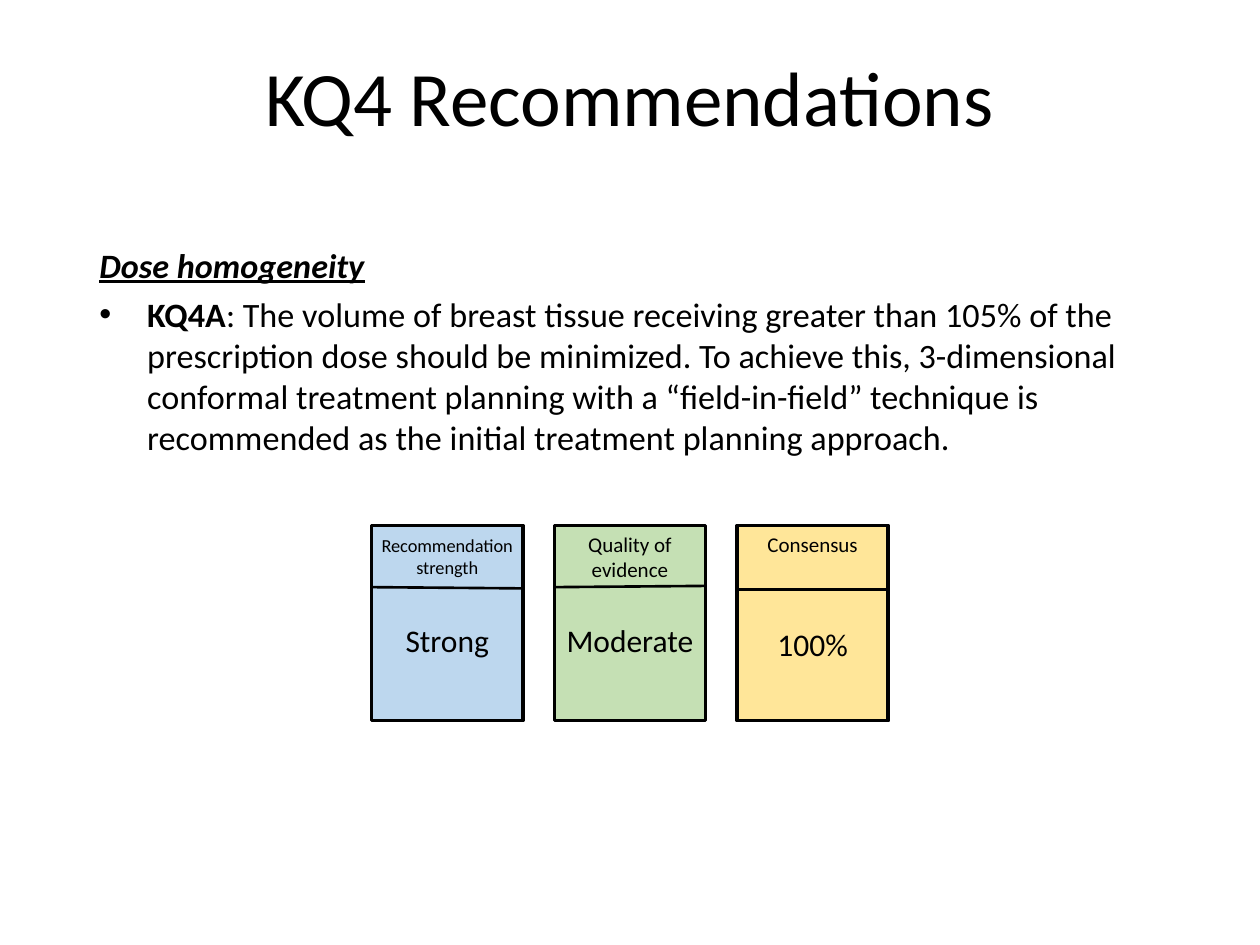
from lxml.etree import SubElement
from pptx import Presentation
from pptx.dml.color import RGBColor
from pptx.enum.shapes import MSO_CONNECTOR, MSO_SHAPE
from pptx.enum.text import MSO_ANCHOR, PP_ALIGN
from pptx.oxml.ns import qn
from pptx.util import Inches, Pt

BLACK = RGBColor(0x00, 0x00, 0x00)
BLUE = RGBColor(0xBD, 0xD7, 0xEE)
GREEN = RGBColor(0xC5, 0xE0, 0xB4)
YELLOW = RGBColor(0xFF, 0xE6, 0x99)
FONT = "Calibri"

TITLE = "KQ4 Recommendations"
HEADING = "Dose homogeneity"
CODE = "KQ4A"
RECOMMENDATION = (
    ": The volume of breast tissue receiving greater than 105% of the "
    "prescription dose should be minimized. To achieve this, 3-dimensional "
    "conformal treatment planning with a “field-in-field” technique is "
    "recommended as the initial treatment planning approach."
)
# label, label size, label insets (x, y), label height, value, fill, divider y (left, right)
CARDS = [
    ("Recommendation strength", 10.5, (0.04, 0.07), 0.5, "Strong", BLUE, (4.66, 4.67)),
    ("Quality of evidence", 12, (0.1, 0.05), 0.5, "Moderate", GREEN, (4.66, 4.65)),
    ("Consensus", 12, (0.1, 0.05), 0.3, "100%", YELLOW, (4.68, 4.68)),
]
CARD_LEFT, CARD_TOP, CARD_W, CARD_H, CARD_GAP = 2.95, 4.17, 1.2, 1.55, 0.25


def add_run(p, text, size, bold=False, italic=False, underline=False):
    r = p.add_run()
    r.text = text
    f = r.font
    f.name, f.size, f.color.rgb = FONT, Pt(size), BLACK
    f.bold, f.italic, f.underline = bold, italic, underline


def add_text(s, text, box, size, align=PP_ALIGN.CENTER, inset=(0.1, 0.05), top=None, **style):
    """Add a wrapped text box; inset is (x, y), and top overrides the upper inset."""
    tf = s.shapes.add_textbox(*map(Inches, box)).text_frame
    tf.word_wrap = True
    tf.vertical_anchor = MSO_ANCHOR.TOP
    tf.margin_left = tf.margin_right = Inches(inset[0])
    tf.margin_top = Inches(inset[1] if top is None else top)
    tf.margin_bottom = Inches(inset[1])
    p = tf.paragraphs[0]
    p.alignment = align
    add_run(p, text, size, **style)
    return tf


def add_bullet(p, indent):
    pPr = p._p.get_or_add_pPr()
    pPr.set("marL", str(Inches(indent)))
    pPr.set("indent", str(-Inches(indent)))
    SubElement(pPr, qn("a:buFont"), typeface="Arial")
    SubElement(pPr, qn("a:buChar"), char="•")


def add_card(s, left, label, label_size, label_inset, label_h, value, fill, divider):
    card = s.shapes.add_shape(
        MSO_SHAPE.RECTANGLE, *map(Inches, (left, CARD_TOP, CARD_W, CARD_H)))
    card.shadow.inherit = False
    card.fill.solid()
    card.fill.fore_color.rgb = fill
    card.line.color.rgb = BLACK
    card.line.width = Pt(2)

    y1, y2 = divider
    line = s.shapes.add_connector(
        MSO_CONNECTOR.STRAIGHT, *map(Inches, (left, y1, left + CARD_W, y2)))
    line.line.color.rgb = BLACK
    line.line.width = Pt(1.5)
    SubElement(line._element.spPr, qn("a:effectLst"))

    add_text(s, label, (left, CARD_TOP, CARD_W, label_h), label_size, inset=label_inset)
    add_text(s, value, (left, min(y2, 4.68) if y1 == y2 else 4.65, CARD_W, 0.63), 18,
             inset=(0.04, 0.05), top=0.28)


def main():
    prs = Presentation()
    prs.slide_width, prs.slide_height = Inches(10), Inches(7.5)
    s = prs.slides.add_slide(prs.slide_layouts[6])

    add_text(s, TITLE, (0.5, 0.3, 9, 1.25), 44, top=0.09)

    tf = add_text(s, HEADING, (0.69, 1.89, 8.62, 1.64), 19.5, align=PP_ALIGN.LEFT,
                  bold=True, italic=True, underline=True)
    p = tf.add_paragraph()
    p.space_before = Pt(4.5)
    add_bullet(p, 0.38)
    add_run(p, CODE, 19.5, bold=True)
    add_run(p, RECOMMENDATION, 19.5)

    for i, card in enumerate(CARDS):
        add_card(s, CARD_LEFT + i * (CARD_W + CARD_GAP), *card)

    prs.save("out.pptx")


if __name__ == "__main__":
    main()
